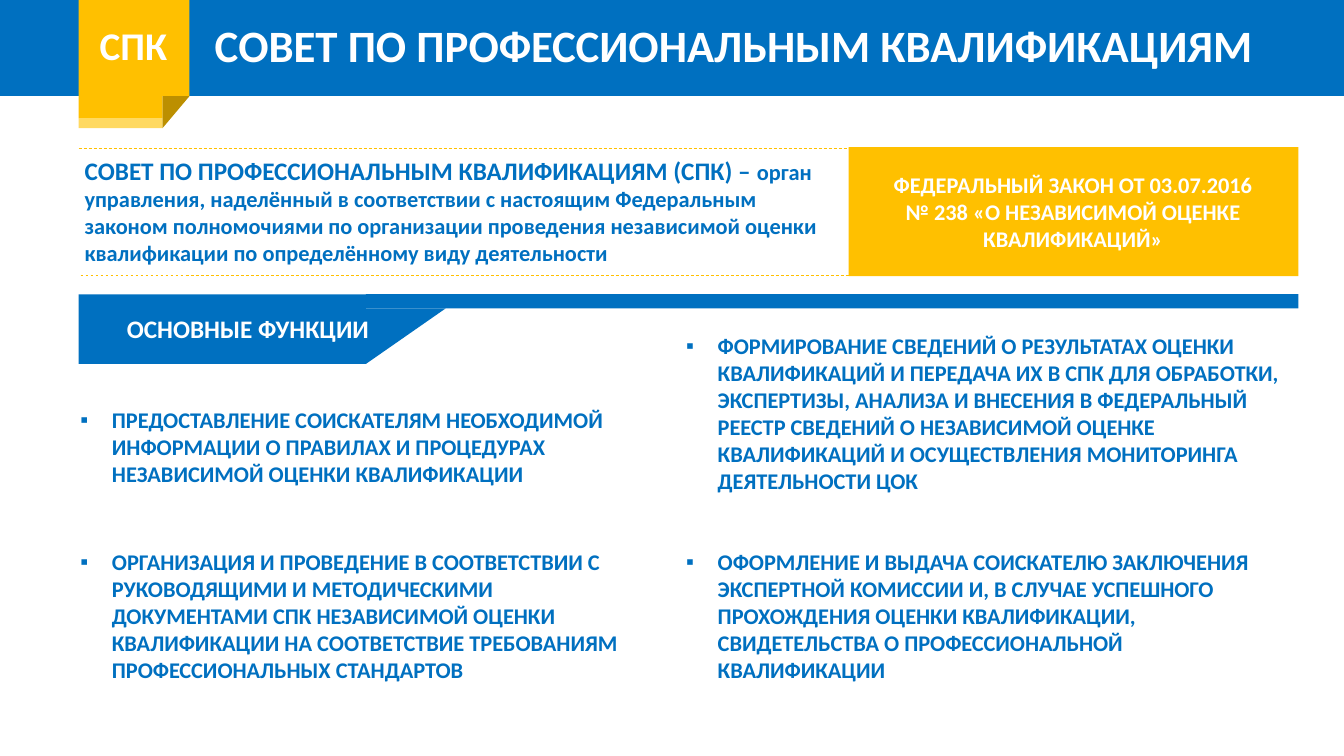
from lxml.etree import SubElement
from pptx import Presentation
from pptx.dml.color import RGBColor
from pptx.enum.dml import MSO_LINE
from pptx.enum.shapes import MSO_CONNECTOR, MSO_SHAPE
from pptx.enum.text import MSO_ANCHOR, PP_ALIGN
from pptx.oxml.ns import qn
from pptx.util import Pt

BLUE = RGBColor(0x00, 0x70, 0xC0)
GOLD = RGBColor(0xFF, 0xC0, 0x00)
DARK_GOLD = RGBColor(0xBC, 0x8F, 0x00)
PALE_GOLD = RGBColor(0xFF, 0xD9, 0x61)
WHITE = RGBColor(0xFF, 0xFF, 0xFF)

TITLE = "СОВЕТ ПО ПРОФЕССИОНАЛЬНЫМ КВАЛИФИКАЦИЯМ"
BADGE = "СПК"
DEFINITION = [
    ("СОВЕТ ПО ПРОФЕССИОНАЛЬНЫМ КВАЛИФИКАЦИЯМ (СПК) – ", 18),
    ("орган управления, наделённый в соответствии с настоящим Федеральным законом "
     "полномочиями по организации проведения независимой оценки квалификации "
     "по определённому виду деятельности", 16),
]
LAW = "ФЕДЕРАЛЬНЫЙ ЗАКОН ОТ 03.07.2016 № 238 «О НЕЗАВИСИМОЙ ОЦЕНКЕ КВАЛИФИКАЦИЙ»"
SECTION = "ОСНОВНЫЕ ФУНКЦИИ"
FUNCTION_COLUMNS = [
    (14.4, 441.4, [
        (286.6, 65.5, "ПРЕДОСТАВЛЕНИЕ СОИСКАТЕЛЯМ НЕОБХОДИМОЙ ИНФОРМАЦИИ О ПРАВИЛАХ "
                      "И ПРОЦЕДУРАХ НЕЗАВИСИМОЙ ОЦЕНКИ КВАЛИФИКАЦИИ"),
        (388.1, 104.4, "ОРГАНИЗАЦИЯ И ПРОВЕДЕНИЕ В СООТВЕТСТВИИ С РУКОВОДЯЩИМИ И "
                       "МЕТОДИЧЕСКИМИ ДОКУМЕНТАМИ СПК НЕЗАВИСИМОЙ ОЦЕНКИ КВАЛИФИКАЦИИ "
                       "НА СООТВЕТСТВИЕ ТРЕБОВАНИЯМ ПРОФЕССИОНАЛЬНЫХ СТАНДАРТОВ"),
    ]),
    (447.1, 480.2, [
        (234, 123.8, "ФОРМИРОВАНИЕ СВЕДЕНИЙ О РЕЗУЛЬТАТАХ ОЦЕНКИ КВАЛИФИКАЦИЙ И "
                     "ПЕРЕДАЧА ИХ В СПК ДЛЯ ОБРАБОТКИ, ЭКСПЕРТИЗЫ, АНАЛИЗА И ВНЕСЕНИЯ "
                     "В ФЕДЕРАЛЬНЫЙ РЕЕСТР СВЕДЕНИЙ О НЕЗАВИСИМОЙ ОЦЕНКЕ КВАЛИФИКАЦИЙ "
                     "И ОСУЩЕСТВЛЕНИЯ МОНИТОРИНГА ДЕЯТЕЛЬНОСТИ ЦОК"),
        (388.1, 104.4, "ОФОРМЛЕНИЕ И ВЫДАЧА СОИСКАТЕЛЮ ЗАКЛЮЧЕНИЯ ЭКСПЕРТНОЙ КОМИССИИ "
                       "И, В СЛУЧАЕ УСПЕШНОГО ПРОХОЖДЕНИЯ ОЦЕНКИ КВАЛИФИКАЦИИ, "
                       "СВИДЕТЕЛЬСТВА О ПРОФЕССИОНАЛЬНОЙ КВАЛИФИКАЦИИ"),
    ]),
]

PAGE_WIDTH, PAGE_HEIGHT = 960, 540
LEFT, RIGHT = 56.2, 927.4
HEADER_HEIGHT = 68.6
BADGE_WIDTH, FOLD_WIDTH, FOLD_HEIGHT, EDGE_HEIGHT = 79.2, 19.4, 23, 7.2
LAW_LEFT, LAW_TOP, LAW_HEIGHT = 606.2, 105.1, 92.2
TAB_TOP, TAB_WIDTH, TAB_HEIGHT, BAR_HEIGHT, SLANT_WIDTH = 210.2, 205.2, 49.7, 10.1, 56.9

deck = Presentation()
deck.slide_width, deck.slide_height = Pt(PAGE_WIDTH), Pt(PAGE_HEIGHT)
page = deck.slides.add_slide(deck.slide_layouts[6])


def add_block(left, top, width, height, color, kind=MSO_SHAPE.RECTANGLE):
    block = page.shapes.add_shape(kind, Pt(left), Pt(top), Pt(width), Pt(height))
    block.shadow.inherit = False
    block.fill.solid()
    block.fill.fore_color.rgb = color
    block.line.fill.background()
    return block


def add_corner(left, top, width, height, color):
    corner = add_block(left, top, width, height, color, MSO_SHAPE.ISOSCELES_TRIANGLE)
    corner.adjustments[0] = 1
    corner.rotation = 180


def add_text(left, top, width, height, spans, color, wrap=True, align=PP_ALIGN.LEFT):
    box = page.shapes.add_textbox(Pt(left), Pt(top), Pt(width), Pt(height))
    box.text_frame.word_wrap = wrap
    para = box.text_frame.paragraphs[0]
    para.alignment = align
    for words, size in spans:
        span = para.add_run()
        span.text = words
        span.font.name = "Calibri"
        span.font.size = Pt(size)
        span.font.bold = True
        span.font.color.rgb = color
    return box


def add_bullet(para):
    properties = para._p.get_or_add_pPr()
    properties.set("marL", str(Pt(58.5)))
    properties.set("indent", str(-Pt(22.5)))
    SubElement(properties, qn("a:buFont"), typeface="Arial")
    SubElement(properties, qn("a:buChar"), char="▪")


def add_dashed_line(left, right, top):
    line = page.shapes.add_connector(
        MSO_CONNECTOR.STRAIGHT, Pt(left), Pt(top), Pt(right), Pt(top))
    line.line.color.rgb = GOLD
    line.line.width = Pt(0.5)
    line.line.dash_style = MSO_LINE.DASH
    SubElement(line._element.spPr, qn("a:effectLst"))


add_block(LEFT, TAB_TOP, TAB_WIDTH, TAB_HEIGHT, BLUE)
add_block(LAW_LEFT, LAW_TOP, RIGHT - LAW_LEFT, LAW_HEIGHT, GOLD)
add_block(0, 0, PAGE_WIDTH, HEADER_HEIGHT, BLUE)
add_text(53.3, 107.3, 555.8, 87.1, DEFINITION, BLUE)

flap_width = BADGE_WIDTH - FOLD_WIDTH
flap_height = FOLD_HEIGHT - EDGE_HEIGHT
add_block(LEFT, 0, BADGE_WIDTH, HEADER_HEIGHT, GOLD)
add_corner(LEFT + flap_width, HEADER_HEIGHT, FOLD_WIDTH, FOLD_HEIGHT, DARK_GOLD)
add_block(LEFT, HEADER_HEIGHT, flap_width, flap_height, GOLD)
add_block(LEFT, HEADER_HEIGHT + flap_height, flap_width, EDGE_HEIGHT, PALE_GOLD)
add_text(64.1, 11.5, 63.4, 41.2, [(BADGE, 28)], WHITE, wrap=False)

add_dashed_line(LEFT, 616.3, 105.8)
add_dashed_line(57.6, 616.3, 196.6)
add_text(625, 118.8, 283, 65.5, [(LAW, 16)], WHITE, align=PP_ALIGN.CENTER)

tab_right = LEFT + TAB_WIDTH
add_block(tab_right, TAB_TOP, RIGHT - tab_right, BAR_HEIGHT, BLUE)
add_corner(tab_right, TAB_TOP + BAR_HEIGHT, SLANT_WIDTH, TAB_HEIGHT - BAR_HEIGHT, BLUE)

for left, width, functions in FUNCTION_COLUMNS:
    for top, height, words in functions:
        function_box = add_text(left, top, width, height, [(words, 16)], BLUE)
        add_bullet(function_box.text_frame.paragraphs[0])

title_box = add_text(146.2, -18, 802.8, 104.4, [(TITLE, 32)], WHITE)
title_box.text_frame.vertical_anchor = MSO_ANCHOR.MIDDLE
title_box.text_frame.paragraphs[0].line_spacing = 0.9
add_text(83.5, 220.3, 193.7, 28.8, [(SECTION, 18)], WHITE, wrap=False)

deck.save("out.pptx")
